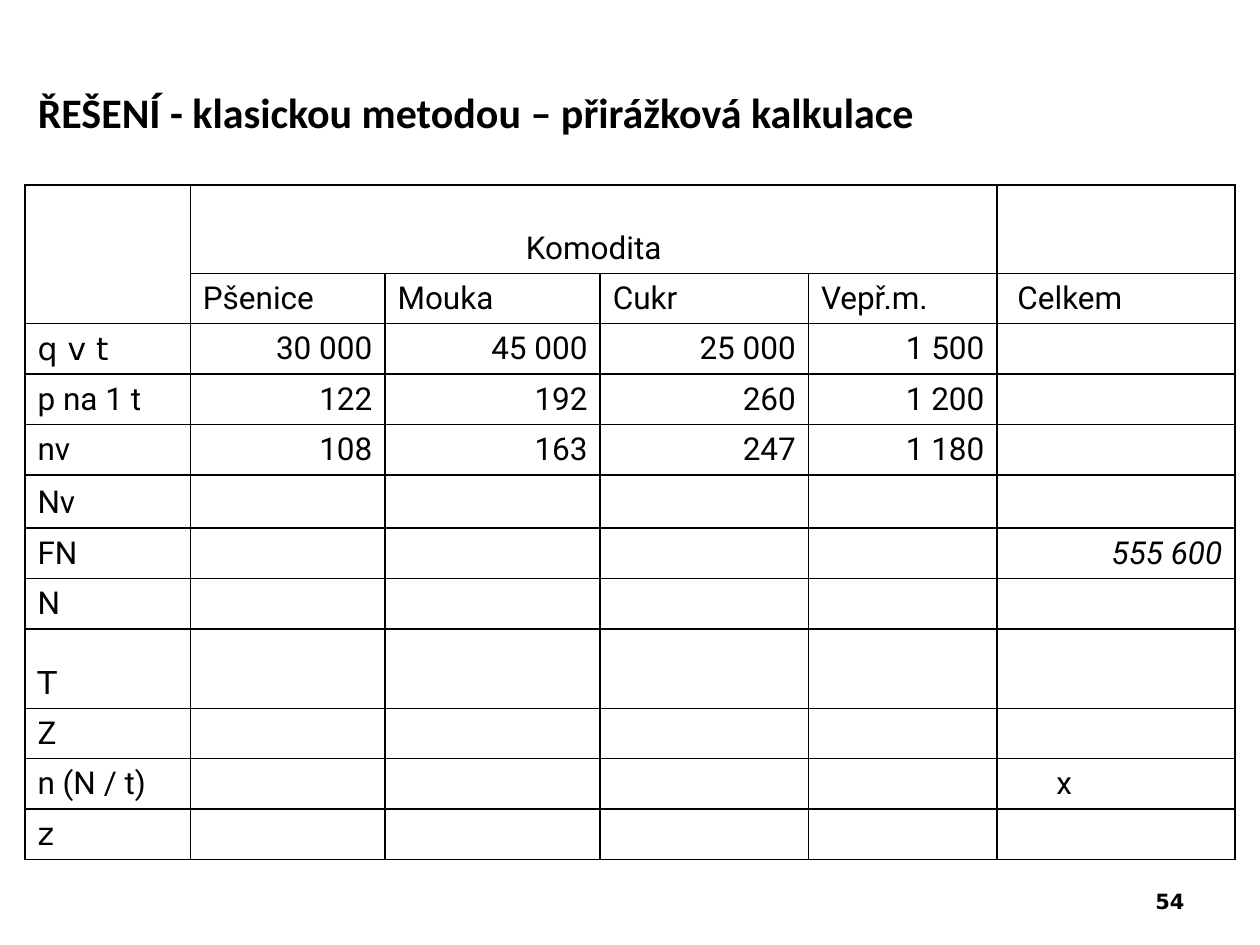
from dataclasses import dataclass

from lxml.etree import SubElement
from pptx import Presentation
from pptx.dml.color import RGBColor
from pptx.enum.text import MSO_ANCHOR, MSO_AUTO_SIZE, PP_ALIGN
from pptx.oxml.ns import qn
from pptx.util import Pt


@dataclass(frozen=True)
class Theme:
    """Colours, fonts and type sizes of the slide."""
    ink: RGBColor = RGBColor(0, 0, 0)
    title_font: str = "Calibri"
    body_font: str = "Roboto"
    plain_font: str = "DejaVu Sans"
    title_size: float = 24
    body_size: float = 18
    number_size: float = 12
    border: float = 1


@dataclass(frozen=True)
class Entry:
    """Text of one table cell with its formatting."""
    text: str
    alignment: PP_ALIGN = PP_ALIGN.LEFT
    font: str = "Roboto"
    italic: bool = False
    indent: float = 0


@dataclass(frozen=True)
class CostRow:
    """One labelled row of the calculation."""
    label: Entry
    values: tuple[str, ...] = ()
    total: Entry | None = None
    height: float = 28.8


THEME = Theme()
COLUMN_WIDTHS = (94.5, 111.25, 123, 119, 107.75, 136)
HEADER_HEIGHTS = (50.4, 28.8)
COMMODITIES = ("Pšenice", "Mouka", "Cukr", "Vepř.m.")
COST_ROWS = (
    CostRow(Entry("q v t", font=THEME.plain_font), ("30 000", "45 000", "25 000", "1 500")),
    CostRow(Entry("p na 1 t"), ("122", "192", "260", "1 200")),
    CostRow(Entry("nv"), ("108", "163", "247", "1 180")),
    CostRow(Entry("Nv"), height=30.4),
    CostRow(Entry("FN"), total=Entry("555 600", PP_ALIGN.RIGHT, italic=True)),
    CostRow(Entry("N")),
    CostRow(Entry("T", font=THEME.plain_font), height=45.4),
    CostRow(Entry("Z")),
    CostRow(Entry("n (N / t)"), total=Entry("x", indent=26.8)),
    CostRow(Entry("z", font=THEME.plain_font)),
)


def add_run(paragraph, text: str, font: str, size: float, bold: bool = False, italic: bool = False) -> None:
    """Add one formatted run to a paragraph."""
    run = paragraph.add_run()
    run.text = text
    run.font.name = font
    run.font.size = Pt(size)
    run.font.bold = bold
    run.font.italic = italic
    run.font.color.rgb = THEME.ink


def format_cell(cell) -> None:
    """Give a cell black borders, no fill and compact empty content."""
    properties = cell._tc.get_or_add_tcPr()
    for side in ("a:lnL", "a:lnR", "a:lnT", "a:lnB"):
        line = SubElement(properties, qn(side), w=str(Pt(THEME.border)))
        fill = SubElement(line, qn("a:solidFill"))
        SubElement(fill, qn("a:srgbClr"), val=str(THEME.ink))
    cell.fill.background()
    cell.margin_top = cell.margin_bottom = Pt(0)


def write_cell(cell, entry: Entry) -> None:
    """Write an entry at the bottom of a cell."""
    cell.vertical_anchor = MSO_ANCHOR.BOTTOM
    cell.margin_left = cell.margin_right = Pt(7.2)
    cell.margin_top = cell.margin_bottom = Pt(3.6)
    paragraph = cell.text_frame.paragraphs[0]
    paragraph.alignment = entry.alignment
    if entry.indent:
        paragraph._p.get_or_add_pPr().set("marL", str(Pt(entry.indent)))
    add_run(paragraph, entry.text, entry.font, THEME.body_size, italic=entry.italic)


def add_title(slide, text: str) -> None:
    """Place and fill the title placeholder."""
    title = slide.shapes.title
    title.left, title.top, title.width, title.height = Pt(14.4), Pt(46), Pt(680.4), Pt(62.6)
    frame = title.text_frame
    frame.word_wrap = True
    frame.auto_size = MSO_AUTO_SIZE.NONE
    frame.vertical_anchor = MSO_ANCHOR.TOP
    paragraph = frame.paragraphs[0]
    paragraph.alignment = PP_ALIGN.LEFT
    add_run(paragraph, text, THEME.title_font, THEME.title_size, bold=True)


def add_cost_table(slide) -> None:
    """Build the calculation table."""
    heights = HEADER_HEIGHTS + tuple(row.height for row in COST_ROWS)
    table = slide.shapes.add_table(
        len(heights), len(COLUMN_WIDTHS), Pt(14.25), Pt(105.75),
        Pt(sum(COLUMN_WIDTHS)), Pt(sum(heights)),
    ).table
    table.first_row = table.horz_banding = False
    for column, width in zip(table.columns, COLUMN_WIDTHS):
        column.width = Pt(width)
    for row, height in zip(table.rows, heights):
        row.height = Pt(height)
    for cell in table.iter_cells():
        format_cell(cell)
    table.cell(0, 0).merge(table.cell(1, 0))
    table.cell(0, 1).merge(table.cell(0, 4))
    write_cell(table.cell(0, 1), Entry("Komodita", PP_ALIGN.CENTER))
    for index, name in enumerate(COMMODITIES, 1):
        write_cell(table.cell(1, index), Entry(name))
    write_cell(table.cell(1, 5), Entry("Celkem", indent=4.5))
    for row_index, row in enumerate(COST_ROWS, len(HEADER_HEIGHTS)):
        write_cell(table.cell(row_index, 0), row.label)
        for index, value in enumerate(row.values, 1):
            write_cell(table.cell(row_index, index), Entry(value, PP_ALIGN.RIGHT))
        if row.total:
            write_cell(table.cell(row_index, 5), row.total)


def add_page_number(slide, number: str) -> None:
    """Add the page number at the lower right."""
    frame = slide.shapes.add_textbox(Pt(516.25), Pt(500.4), Pt(167.75), Pt(28.8)).text_frame
    frame.word_wrap = True
    frame.vertical_anchor = MSO_ANCHOR.MIDDLE
    paragraph = frame.paragraphs[0]
    paragraph.alignment = PP_ALIGN.RIGHT
    add_run(paragraph, number, THEME.plain_font, THEME.number_size, bold=True)


def main() -> None:
    """Build and save the presentation."""
    presentation = Presentation()
    presentation.slide_width, presentation.slide_height = Pt(720), Pt(540)
    slide = presentation.slides.add_slide(presentation.slide_layouts.get_by_name("Title Only"))
    add_title(slide, "ŘEŠENÍ - klasickou metodou – přirážková kalkulace")
    add_cost_table(slide)
    add_page_number(slide, "54")
    presentation.save("out.pptx")


if __name__ == "__main__":
    main()
